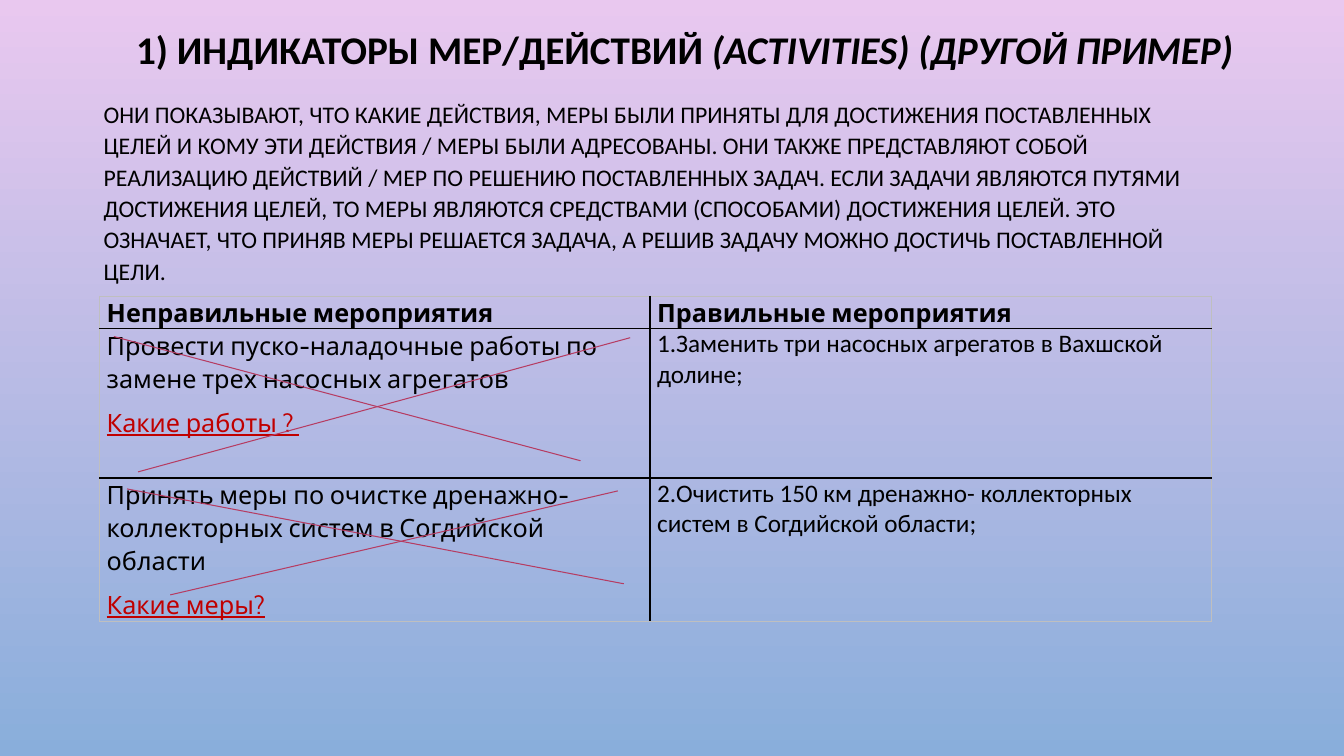
"""Builds a slide on activity indicators with a table of wrong and right activities."""
from dataclasses import dataclass

from lxml.etree import SubElement
from pptx import Presentation
from pptx.dml.color import RGBColor as RGB
from pptx.enum.shapes import MSO_CONNECTOR as Connector
from pptx.enum.text import MSO_ANCHOR as Anchor, MSO_AUTO_SIZE as AutoSize, PP_ALIGN as Align
from pptx.oxml import parse_xml
from pptx.oxml.ns import nsdecls, qn
from pptx.util import Cm, Pt


@dataclass(frozen=True)
class Theme:
    top: str = "E9C8EF"
    bottom: str = "89AEDB"
    text: str = "000000"
    question: str = "C00000"
    cross: str = "B63C62"
    frame: str = "BFBFBF"
    main_font: str = "Calibri"
    table_font: str = "Cabin"
    title_size: int = 28
    body_size: int = 17
    table_size: int = 18


theme = Theme()


def style_font(font, name, size, color=theme.text, bold=False, underline=False):
    font.name = name
    font.size = Pt(size)
    font.color.rgb = RGB.from_string(color)
    font.bold = bold
    font.underline = underline


def set_borders(cell, colors):
    properties = cell._tc.get_or_add_tcPr()
    for position, (side, color) in enumerate(zip("LRTB", colors)):
        properties.insert(position, parse_xml(
            f'<a:ln{side} {nsdecls("a")} w="12700"><a:solidFill>'
            f'<a:srgbClr val="{color}"/></a:solidFill></a:ln{side}>'))


presentation = Presentation()
presentation.slide_width = Cm(33.87)
presentation.slide_height = Cm(19.05)
slide = presentation.slides.add_slide(presentation.slide_layouts[5])

background = slide.background.fill
background.gradient()
background.gradient_angle = 270
for stop, color in zip(background.gradient_stops, (theme.top, theme.bottom)):
    stop.color.rgb = RGB.from_string(color)

title = slide.shapes.title
title.left, title.top, title.width, title.height = Cm(3), Cm(0.48), Cm(28.75), Cm(2.69)
title_frame = title.text_frame
title_frame.auto_size = AutoSize.NONE
title_frame.vertical_anchor = Anchor.TOP
title_frame.margin_top = Cm(0.28)
title_frame.margin_right = Cm(0.5)
paragraph = title_frame.paragraphs[0]
paragraph.alignment = Align.CENTER
paragraph.line_spacing = 0.9
for text, italic in (("1) ИНДИКАТОРЫ МЕР/ДЕЙСТВИЙ ", False),
                     ("(ACTIVITIES) (ДРУГОЙ ПРИМЕР)", True)):
    run = paragraph.add_run()
    run.text = text
    style_font(run.font, theme.main_font, theme.title_size, bold=True)
    run.font.italic = italic

body = slide.shapes.add_textbox(Cm(2.36), Cm(2.31), Cm(28.75), Cm(4.85))
body.text_frame.word_wrap = True
body.text_frame.text = (
    "ОНИ ПОКАЗЫВАЮТ, ЧТО КАКИЕ ДЕЙСТВИЯ, МЕРЫ БЫЛИ ПРИНЯТЫ ДЛЯ ДОСТИЖЕНИЯ "
    "ПОСТАВЛЕННЫХ ЦЕЛЕЙ И КОМУ ЭТИ ДЕЙСТВИЯ / МЕРЫ БЫЛИ АДРЕСОВАНЫ. ОНИ ТАКЖЕ "
    "ПРЕДСТАВЛЯЮТ СОБОЙ РЕАЛИЗАЦИЮ ДЕЙСТВИЙ / МЕР ПО РЕШЕНИЮ ПОСТАВЛЕННЫХ ЗАДАЧ. "
    "ЕСЛИ ЗАДАЧИ ЯВЛЯЮТСЯ ПУТЯМИ ДОСТИЖЕНИЯ ЦЕЛЕЙ, ТО МЕРЫ ЯВЛЯЮТСЯ СРЕДСТВАМИ "
    "(СПОСОБАМИ) ДОСТИЖЕНИЯ ЦЕЛЕЙ. ЭТО ОЗНАЧАЕТ, ЧТО ПРИНЯВ МЕРЫ РЕШАЕТСЯ ЗАДАЧА, "
    "А РЕШИВ ЗАДАЧУ МОЖНО ДОСТИЧЬ ПОСТАВЛЕННОЙ ЦЕЛИ.")
paragraph = body.text_frame.paragraphs[0]
paragraph.line_spacing = 1.1
style_font(paragraph.runs[0].font, theme.main_font, theme.body_size)

activities = (
    ("Неправильные мероприятия", "Правильные мероприятия"),
    ("Провести пуско-наладочные работы по замене трех насосных агрегатов\nКакие работы ? ",
     "1.Заменить три насосных агрегатов в Вахшской долине;"),
    ("Принять меры по очистке дренажно-коллекторных систем в Согдийской области\nКакие меры?",
     "2.Очистить 150 км дренажно- коллекторных систем в Согдийской области;"),
)
column_widths = (13.87, 14.15)
row_heights = (0.74, 3.76, 3.61)
table = slide.shapes.add_table(len(row_heights), len(column_widths), Cm(2.51), Cm(7.47),
                               Cm(sum(column_widths)), Cm(sum(row_heights))).table
table.first_row = table.horz_banding = False
for column, width in zip(table.columns, column_widths):
    column.width = Cm(width)
for row, height in zip(table.rows, row_heights):
    row.height = Cm(height)

for row_index, texts in enumerate(activities):
    for column_index, text in enumerate(texts):
        cell = table.cell(row_index, column_index)
        cell.text_frame.text = text
        cell.margin_left = cell.margin_right = Cm(0.18)
        cell.margin_top = cell.margin_bottom = 0
        cell.fill.background()
        is_edge = (column_index == 0, column_index == len(column_widths) - 1,
                   row_index == 0, row_index == len(row_heights) - 1)
        set_borders(cell, [theme.frame if edge else theme.text for edge in is_edge])
        is_header = row_index == 0
        is_correct = column_index == 1 and not is_header
        for paragraph_index, paragraph in enumerate(cell.text_frame.paragraphs):
            is_question = paragraph_index == 1
            paragraph.alignment = Align.JUSTIFY if is_header else Align.LEFT
            if not is_correct:
                paragraph.line_spacing = 1.07
                paragraph.space_after = Pt(8)
            style_font(paragraph.runs[0].font,
                       theme.main_font if is_correct else theme.table_font, theme.table_size,
                       theme.question if is_question else theme.text,
                       bold=is_header, underline=is_question)

cross_lines = (
    (15.88, 8.51, 3.48, 11.89),
    (2.87, 8.48, 14.63, 11.61),
    (15.57, 12.37, 4.29, 14.99),
    (3.2, 12.32, 15.72, 14.71),
)
for ends in cross_lines:
    line = slide.shapes.add_connector(Connector.STRAIGHT, *(Cm(value) for value in ends))
    line.line.color.rgb = RGB.from_string(theme.cross)
    line.line.width = Pt(0.75)
    SubElement(line._element.spPr, qn("a:effectLst"))

presentation.save("out.pptx")
